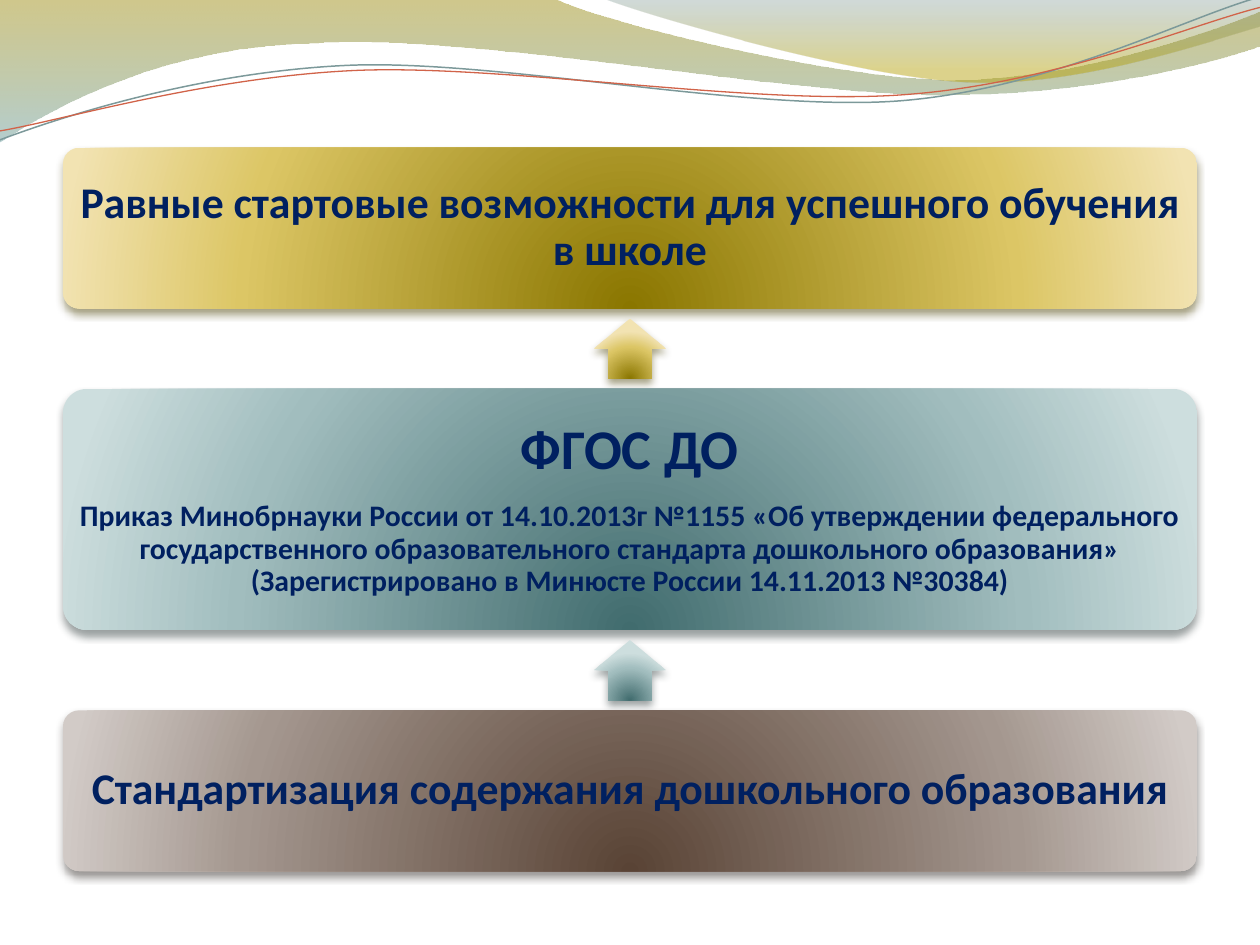
from lxml.etree import SubElement
from pptx import Presentation
from pptx.dml.color import RGBColor
from pptx.enum.shapes import MSO_SHAPE as Shape
from pptx.enum.text import MSO_ANCHOR as Anchor, PP_ALIGN as Align
from pptx.oxml.ns import qn
from pptx.util import Cm, Pt

THEME = {
    "font": "Calibri",
    "text": "002060",
    "title": 32,
    "body": 25,
    "note": 17,
    # gradient stops: position, colour, opacity (percent)
    "gold": [(0, "8A7600", 100), (68, "DCC665", 100), (100, "F2E3B2", 100)],
    "teal": [(0, "416C6E", 100), (68, "A1BDBE", 100), (100, "CDDEDE", 100)],
    "brown": [(0, "594335", 100), (68, "A4978F", 100), (100, "D2CBC7", 100)],
    "shadow": {"gold": "483F00", "teal": "313D3D", "brown": "312B27"},
    "wide_wave": [(0, "978500", 45), (100, "77A5A6", 55)],
    "right_wave": [(0, "648484", 30), (80, "B49F00", 45)],
}

# Boxes from top to bottom: colour, height in units, paragraphs (text, size)
BOXES = [
    ("gold", 2, [("Равные стартовые возможности для успешного обучения в школе", "body")]),
    ("teal", 3, [
        ("ФГОС ДО", "title"),
        ("Приказ Минобрнауки России от 14.10.2013г №1155 «Об утверждении федерального "
         "государственного образовательного стандарта дошкольного образования» "
         "(Зарегистрировано в Минюсте России 14.11.2013 №30384)", "note"),
    ]),
    ("brown", 2, [("Стандартизация содержания дошкольного образования", "body")]),
]

# Outlines in cm: a start point, then segments of one point (line) or three (curve)
WAVES = [
    ("wide_wave", (0, 0), [
        [(11.18, -0.03)],
        [(12.09, 0.43), (16.87, 1.6), (19.25, 1.6)],
        [(21.67, 1.6), (24.33, 0.66), (25.4, 0.23)],
        [(25.43, 0.91)],
        [(24.97, 1.12), (22.1, 1.93), (18.95, 1.91)],
        [(15.8, 1.91), (9.7, 0.71), (6.53, 0.86)],
        [(3.28, 0.91), (1.17, 2.11), (-0.03, 2.87)],
    ]),
    ("right_wave", (12.17, -0.03), [
        [(12.93, 0.28), (17.32, 1.57), (19.53, 1.65)],
        [(21.74, 1.75), (24.41, 0.81), (25.4, 0.53)],
        [(25.4, 0)],
    ]),
]
# Thin lines, given before they are turned by STRAND_ROTATION
STRANDS = [
    ("7C999A", 0.85, (-0.05, 2.22), [
        [(1.19, 1.82), (4.02, 1.04), (7.05, 1.05)],
        [(10.05, 1.07), (15.02, 2.37), (18.08, 2.29)],
        [(21.13, 2.2), (23.87, 0.91), (25.41, 0.55)],
    ]),
    ("D16349", 0.75, (-0.04, 2.04), [
        [(1.16, 1.9), (4.18, 1.15), (7.2, 1.16)],
        [(10.22, 1.18), (15.13, 2.25), (18.18, 2.17)],
        [(21.21, 2.1), (23.93, 1.06), (25.45, 0.75)],
    ]),
]
STRAND_ROTATION = 357.3

SLIDE_W, SLIDE_H = 25.4, 19.05
LEFT, TOP = 1.27, 2.98
UNIT = 1.62  # gap between boxes; box heights are multiples of it
ARROW_LENGTH, ARROW_WIDTH = 0.75 * UNIT, 0.9 * UNIT


def set_attrs(obj, values):
    for name, value in values.items():
        setattr(obj, name, value)


def add_color(parent, color, opacity):
    clr = SubElement(parent, qn("a:srgbClr"), val=color)
    if opacity < 100:
        SubElement(clr, qn("a:alpha"), val=str(opacity * 1000))


def set_gradient(sp, stops, radial=False):
    """Fill top to bottom, or radially from a centre below the shape."""
    sp.fill.background()
    spPr = sp._element.spPr
    grad = SubElement(spPr, qn("a:gradFill"))
    spPr.replace(spPr.find(qn("a:noFill")), grad)
    gs_list = SubElement(grad, qn("a:gsLst"))
    for pos, color, opacity in stops:
        add_color(SubElement(gs_list, qn("a:gs"), pos=str(pos * 1000)), color, opacity)
    if radial:
        circle = SubElement(grad, qn("a:path"), path="circle")
        SubElement(circle, qn("a:fillToRect"), l="50000", t="130000", r="50000", b="-30000")
    else:
        SubElement(grad, qn("a:lin"), ang="5400000", scaled="0")


def add_glossy(shapes, kind, box, color, adjustments):
    sp = shapes.add_shape(kind, *map(Cm, box))
    for i, value in enumerate(adjustments):
        sp.adjustments[i] = value
    set_gradient(sp, THEME[color], radial=True)
    sp.line.fill.background()
    sp.shadow.inherit = False
    effects = sp._element.spPr.find(qn("a:effectLst"))
    shadow = SubElement(effects, qn("a:outerShdw"), blurRad=str(Pt(4.5)), dist=str(Pt(3)),
                        dir="5400000", rotWithShape="0")
    add_color(shadow, THEME["shadow"][color], 48)
    return sp


def write(sp, paragraphs):
    tf = sp.text_frame
    margins = {f"margin_{side}": Cm(0.16) for side in ("left", "right", "top", "bottom")}
    set_attrs(tf, {"word_wrap": True, "vertical_anchor": Anchor.MIDDLE, **margins})
    for i, (text, size) in enumerate(paragraphs):
        p = tf.add_paragraph() if i else tf.paragraphs[0]
        set_attrs(p, {"alignment": Align.CENTER, "line_spacing": 0.9})
        if i < len(paragraphs) - 1:
            p.space_after = Pt(0.35 * THEME[size])
        r = p.add_run()
        r.text = text
        set_attrs(r.font, {"name": THEME["font"], "size": Pt(THEME[size]), "bold": True})
        r.font.color.rgb = RGBColor.from_string(THEME["text"])


def add_outline(shapes, start, segments, close):
    """Build a freeform, then join each three-point segment into a Bezier curve."""
    builder = shapes.build_freeform(*map(Cm, start))
    builder.add_line_segments([(Cm(x), Cm(y)) for seg in segments for x, y in seg], close=close)
    sp = builder.convert_to_shape()
    sp.shadow.inherit = False
    lines = sp._element.spPr.findall(".//" + qn("a:lnTo"))
    for seg in segments:
        group, lines = lines[:len(seg)], lines[len(seg):]
        if len(seg) == 3:
            curve = SubElement(group[0].getparent(), qn("a:cubicBezTo"))
            group[0].addprevious(curve)
            for line in group:
                curve.append(line[0])
                line.getparent().remove(line)
    return sp


def add_waves(shapes):
    for fill, start, segments in WAVES:
        sp = add_outline(shapes, start, segments, close=True)
        set_gradient(sp, THEME[fill])
        sp.line.fill.background()
    for color, width, start, segments in STRANDS:
        sp = add_outline(shapes, start, segments, close=False)
        sp.rotation = STRAND_ROTATION
        sp.fill.background()
        sp.line.color.rgb = RGBColor.from_string(color)
        sp.line.width = Pt(width)


def add_boxes(shapes):
    top = TOP
    for i, (color, units, paragraphs) in enumerate(BOXES):
        height = units * UNIT
        box = (LEFT, top, SLIDE_W - 2 * LEFT, height)
        write(add_glossy(shapes, Shape.ROUNDED_RECTANGLE, box, color, [0.1]), paragraphs)
        top += height + UNIT
        if i < len(BOXES) - 1:
            middle = top - UNIT / 2
            arrow = ((SLIDE_W - ARROW_LENGTH) / 2, middle - ARROW_WIDTH / 2,
                     ARROW_LENGTH, ARROW_WIDTH)
            add_glossy(shapes, Shape.RIGHT_ARROW, arrow, color, [0.6, 0.5]).rotation = 270


def main():
    prs = Presentation()
    set_attrs(prs, {"slide_width": Cm(SLIDE_W), "slide_height": Cm(SLIDE_H)})
    shapes = prs.slides.add_slide(prs.slide_layouts[6]).shapes
    add_waves(shapes)
    add_boxes(shapes)
    prs.save("out.pptx")


if __name__ == "__main__":
    main()
